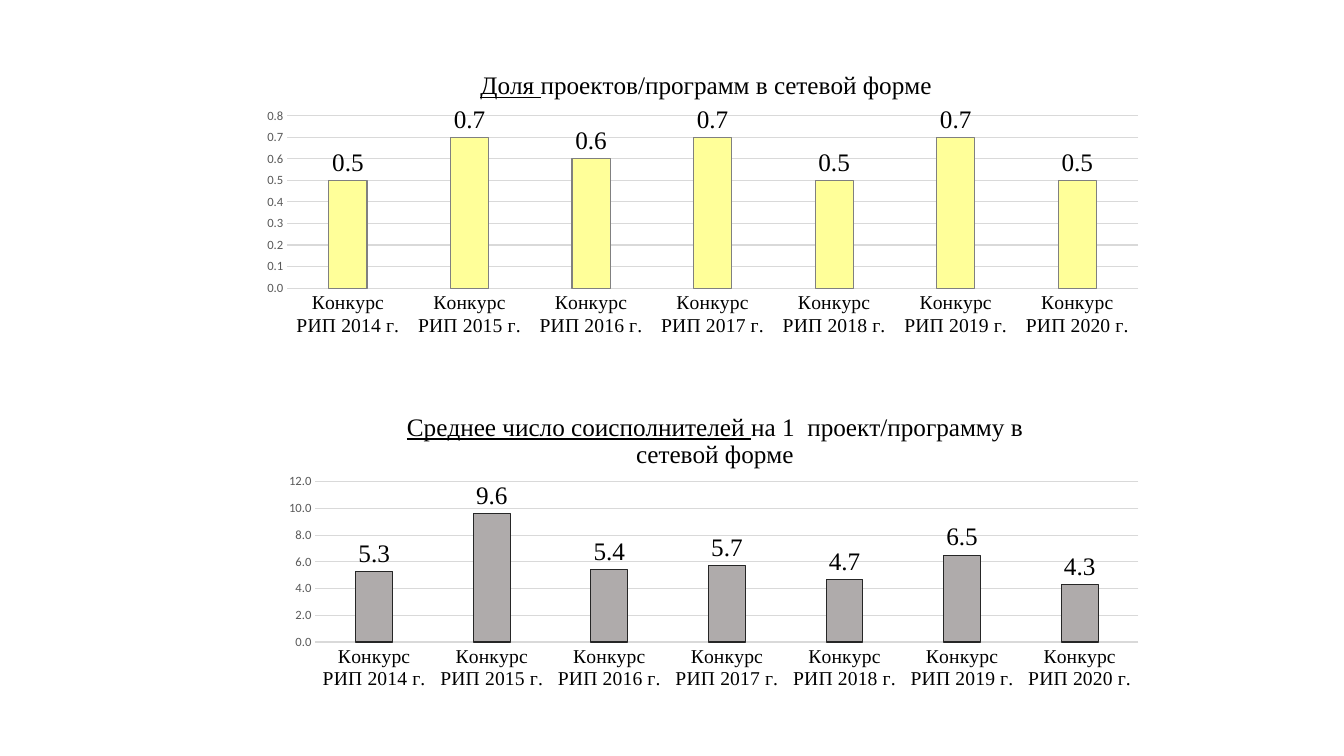
from dataclasses import dataclass

from pptx import Presentation
from pptx.chart.data import CategoryChartData
from pptx.dml.color import RGBColor
from pptx.enum.chart import XL_CHART_TYPE, XL_LABEL_POSITION, XL_TICK_MARK
from pptx.enum.text import PP_ALIGN
from pptx.oxml import parse_xml
from pptx.oxml.ns import nsdecls, qn
from pptx.util import Pt


@dataclass
class Theme:
    text: str = "000000"
    muted: str = "595959"
    grid: str = "D9D9D9"
    yellow: str = "FFFF99"
    yellow_line: str = "808080"
    gray: str = "AFABAB"
    gray_line: str = "262626"
    serif: str = "Times New Roman"
    sans: str = "Calibri"
    big: float = 18
    label: float = 14
    base: float = 10
    small: float = 9
    line: float = 0.75


class SlideBuilder:
    def __init__(self, s, theme):
        self.s, self.t = s, theme

    def font(self, font, size, color, name):
        font.size, font.name, font.bold = Pt(size), name, False
        font.color.rgb = RGBColor.from_string(color)

    def line(self, line, color):
        line.color.rgb = RGBColor.from_string(color)
        line.width = Pt(self.t.line)

    def place(self, element, target="", **fractions):
        """Set a manual layout, in fractions of the chart's size."""
        old = element.find(qn("c:layout"))
        if old is not None:
            element.remove(old)
        modes = '<c:xMode val="edge"/><c:yMode val="edge"/>'
        values = "".join(f'<c:{k} val="{v}"/>' for k, v in fractions.items())
        layout = parse_xml(f'<c:layout {nsdecls("c")}><c:manualLayout>{target}{modes}{values}'
                           '</c:manualLayout></c:layout>')
        tx = element.find(qn("c:tx"))
        if tx is None:
            element.insert(0, layout)
        else:
            tx.addnext(layout)

    def title(self, chart, underlined, rest, x, y):
        title = chart.chart_title
        p = title.text_frame.paragraphs[0]
        p.alignment = PP_ALIGN.CENTER
        self.font(p.font, self.t.big, self.t.text, self.t.serif)
        for text, underline in ((underlined, True), (rest, False)):
            r = p.add_run()
            r.text = text
            self.font(r.font, self.t.big, self.t.text, self.t.serif)
            r.font.underline = underline
        self.place(title.element, x=x, y=y)

    def axes(self, chart, top, step):
        t = self.t
        cat, val = chart.category_axis, chart.value_axis
        for axis in (cat, val):
            axis.major_tick_mark = axis.minor_tick_mark = XL_TICK_MARK.NONE
        self.font(cat.tick_labels.font, t.label, t.text, t.serif)
        self.line(cat.format.line, t.grid)
        self.font(val.tick_labels.font, t.small, t.muted, t.sans)
        val.tick_labels.number_format = "0.0"
        val.tick_labels.number_format_is_linked = False
        val.minimum_scale, val.maximum_scale, val.major_unit = 0, top, step
        val.format.line.fill.background()
        self.line(val.major_gridlines.format.line, t.grid)

    def column_chart(self, box, categories, values, fill, outline, title, scale, plot_area):
        t = self.t
        data = CategoryChartData(number_format="0.0")
        data.categories = categories
        data.add_series("Series 1", values)
        chart = self.s.shapes.add_chart(
            XL_CHART_TYPE.COLUMN_CLUSTERED, *map(Pt, box), data).chart
        self.font(chart.font, t.base, t.text, t.sans)
        chart.has_legend = False
        self.title(chart, *title)
        self.axes(chart, *scale)

        # Columns and their values
        plot = chart.plots[0]
        plot.gap_width, plot.overlap, plot.vary_by_categories = 219, -27, False
        series = plot.series[0]
        series.format.fill.solid()
        series.format.fill.fore_color.rgb = RGBColor.from_string(fill)
        self.line(series.format.line, outline)
        labels = series.data_labels
        labels.show_value = True
        labels.number_format, labels.number_format_is_linked = "0.0", False
        labels.position = XL_LABEL_POSITION.OUTSIDE_END
        self.font(labels.font, t.big, t.text, t.serif)

        area = chart.element.find(".//" + qn("c:plotArea"))
        self.place(area, '<c:layoutTarget val="inner"/>', **dict(zip("xywh", plot_area)))


def main():
    prs = Presentation()
    prs.slide_width, prs.slide_height = Pt(960), Pt(540)
    theme = Theme()
    slide = SlideBuilder(prs.slides.add_slide(prs.slide_layouts[6]), theme)
    contests = [f"Конкурс РИП {year} г." for year in range(2014, 2021)]

    # Average number of partners
    slide.column_chart(
        (193.7, 281.5, 632.2, 216), contests, (5.3, 9.6, 5.4, 5.7, 4.7, 6.5, 4.3),
        theme.gray, theme.gray_line,
        ("Среднее число соисполнителей ", "на 1  проект/программу в сетевой форме", 0.15, 0.05),
        (12, 2), (0.05, 0.29, 0.93, 0.53))

    # Share of network projects
    slide.column_chart(
        (179.3, 37.4, 646.6, 216), contests, (0.5, 0.7, 0.6, 0.7, 0.5, 0.7, 0.5),
        theme.yellow, theme.yellow_line,
        ("Доля ", "проектов/программ в сетевой форме", 0.25, 0.05),
        (0.8, 0.1), (0.04, 0.21, 0.94, 0.57))

    prs.save("out.pptx")


if __name__ == "__main__":
    main()
